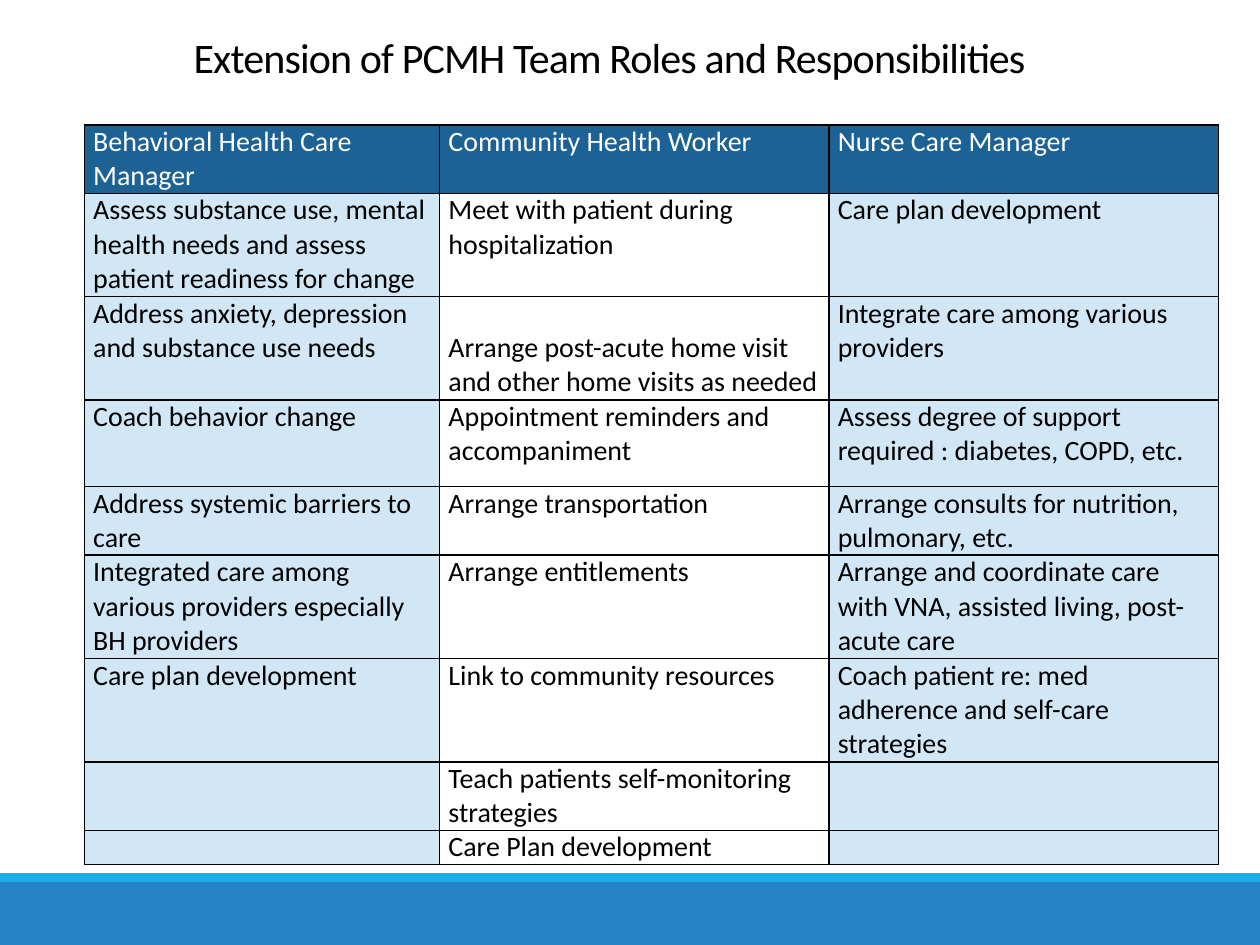
from lxml.etree import SubElement
from pptx import Presentation
from pptx.dml.color import RGBColor
from pptx.enum.shapes import MSO_SHAPE
from pptx.enum.text import MSO_ANCHOR, MSO_AUTO_SIZE, PP_ALIGN
from pptx.oxml.ns import qn
from pptx.util import Inches, Pt

TITLE = "Extension of PCMH Team Roles and Responsibilities"
ROWS = [
    ("Behavioral Health Care Manager", "Community Health Worker", "Nurse Care Manager"),
    ("Assess substance use, mental health needs and assess patient readiness for change",
     "Meet with patient during hospitalization", "Care plan development"),
    ("Address anxiety, depression and substance use needs",
     "Arrange post-acute home visit and other home visits as needed",
     "Integrate care among various providers"),
    ("Coach behavior change", "Appointment reminders and accompaniment",
     "Assess degree of support required : diabetes, COPD, etc."),
    ("Address systemic barriers to care", "Arrange transportation",
     "Arrange consults for nutrition, pulmonary, etc."),
    ("Integrated care among various providers especially BH providers",
     "Arrange entitlements",
     "Arrange and coordinate care with VNA, assisted living, post-acute care"),
    ("Care plan development", "Link to community resources",
     "Coach patient re: med adherence and self-care strategies"),
    ("", "Teach patients self-monitoring strategies", ""),
    ("", "Care Plan development", ""),
]
COL_WIDTHS = [2.82, 3.09, 3.09]
ROW_HEIGHTS = [0.54, 0.82, 0.82, 0.69, 0.54, 0.82, 0.82, 0.54, 0.27]
COLUMN_FILLS = ["D1E7F6", None, "D1E7F6"]
HEADER_FILL = "1D6294"
LOWERED_CELL = (2, 1)
BARS = [(7, 0.5, "2683C6"), (6.93, 0.07, "1CADE4")]
CELL_FORMAT = {"margin_left": Inches(0.07), "margin_right": Inches(0.07),
               "margin_top": 0, "margin_bottom": 0, "vertical_anchor": MSO_ANCHOR.TOP}
TITLE_FORMAT = {"margin_left": Inches(0.1), "margin_right": Inches(0.1),
                "margin_top": Inches(0.05), "margin_bottom": Inches(0.39),
                "vertical_anchor": MSO_ANCHOR.MIDDLE, "word_wrap": True,
                "auto_size": MSO_AUTO_SIZE.NONE}


def rgb(value):
    return RGBColor.from_string(value)


def apply(obj, values):
    for name, value in values.items():
        setattr(obj, name, value)


def add_run(p, text, size, color):
    r = p.add_run()
    r.text = text
    apply(r.font, {"size": Pt(size), "name": "Calibri", "bold": False})
    r.font.color.rgb = rgb(color)
    return r


def add_borders(cell):
    tcPr = cell._tc.get_or_add_tcPr()
    for side in ("a:lnL", "a:lnR", "a:lnT", "a:lnB"):
        ln = SubElement(tcPr, qn(side), w=str(Pt(1)))
        fill = SubElement(ln, qn("a:solidFill"))
        SubElement(fill, qn("a:srgbClr"), val="000000")


def format_cell(cell, text, fill, color):
    apply(cell, CELL_FORMAT)
    add_borders(cell)
    if fill:
        cell.fill.solid()
        cell.fill.fore_color.rgb = rgb(fill)
    else:
        cell.fill.background()
    p = cell.text_frame.paragraphs[0]
    if text:
        add_run(p, text, 16, color)
    else:
        SubElement(p._p, qn("a:endParaRPr"), sz="1600")


prs = Presentation()
prs.slide_width, prs.slide_height = Inches(10), Inches(7.5)
s = prs.slides.add_slide(prs.slide_layouts[5])

title = s.shapes.title
apply(title, {"left": Inches(0.17), "top": Inches(0.3),
              "width": Inches(9.33), "height": Inches(0.7)})
tf = title.text_frame
apply(tf, TITLE_FORMAT)
p = tf.paragraphs[0]
apply(p, {"alignment": PP_ALIGN.CENTER, "line_spacing": 0.85})
r = add_run(p, TITLE, 24, "000000")
r.font._element.set("spc", "-50")

for top, height, color in BARS:
    bar = s.shapes.add_shape(MSO_SHAPE.RECTANGLE, 0, Inches(top), prs.slide_width, Inches(height))
    bar.shadow.inherit = False
    bar.fill.solid()
    bar.fill.fore_color.rgb = rgb(color)
    bar.line.fill.background()

table = s.shapes.add_table(len(ROWS), len(COL_WIDTHS), Inches(0.67), Inches(0.99),
                           Inches(sum(COL_WIDTHS)), Inches(sum(ROW_HEIGHTS))).table
apply(table, {"first_row": False, "horz_banding": False})
for column, width in zip(table.columns, COL_WIDTHS):
    column.width = Inches(width)
for i, (texts, height) in enumerate(zip(ROWS, ROW_HEIGHTS)):
    table.rows[i].height = Inches(height)
    for j, text in enumerate(texts):
        fill, color = (COLUMN_FILLS[j], "000000") if i else (HEADER_FILL, "FFFFFF")
        format_cell(table.cell(i, j), text, fill, color)
table.cell(*LOWERED_CELL).margin_top = Inches(0.27)

prs.save("out.pptx")
